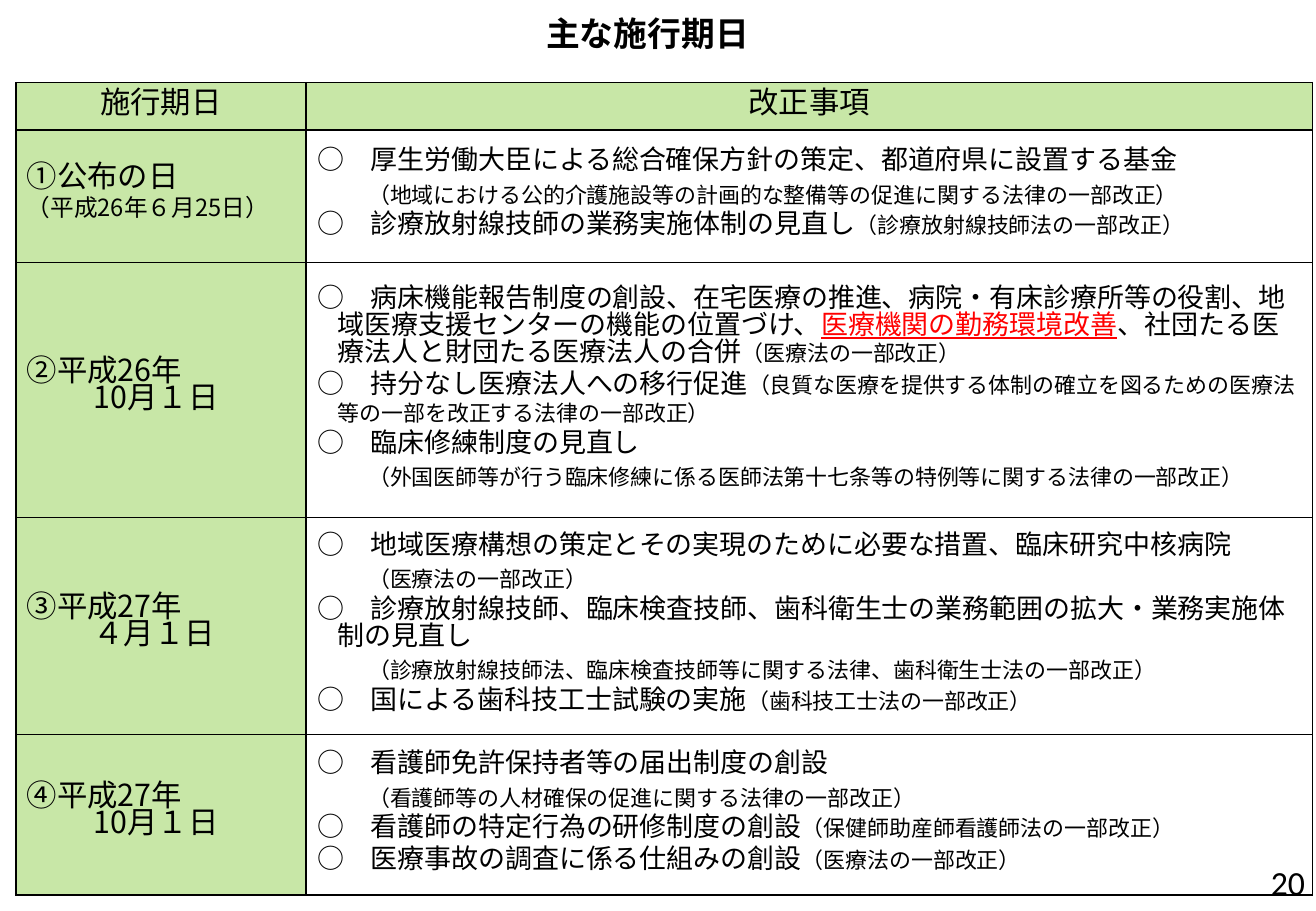
from dataclasses import dataclass

from lxml import etree
from pptx import Presentation
from pptx import util as u
from pptx.dml.color import RGBColor
from pptx.enum import text
from pptx.oxml import ns


@dataclass(frozen=True)
class Theme:
    black: str = "000000"
    red: str = "FF0000"
    green: str = "92D050"
    green_alpha: int = 50
    date_font: str = "Noto Sans CJK JP"
    item_font: str = "Calibri"
    title_size: int = 20
    date_size: int = 18
    item_size: int = 16
    note_size: int = 14
    law_size: int = 13
    line_pitch: int = 16
    border: int = 1


def add_xml(parent, tag, **attributes):
    return etree.SubElement(parent, ns.qn(tag), attributes)


class SlideBuilder:
    def __init__(self, slide, theme):
        self.slide = slide
        self.theme = theme
        # run style: font, size, colour, bold, underline
        self.styles = {
            "title": (theme.date_font, theme.title_size, theme.black, True, False),
            "number": (theme.item_font, theme.title_size, theme.black, False, False),
            "date": (theme.date_font, theme.date_size, theme.black, False, False),
            "note": (theme.date_font, theme.note_size, theme.black, False, False),
            "item": (theme.item_font, theme.item_size, theme.black, False, False),
            "key": (theme.item_font, theme.item_size, theme.red, False, True),
            "law": (theme.item_font, theme.law_size, theme.black, False, False),
        }

    def style_run(self, run, style):
        name, size, color, bold, underline = self.styles[style]
        font = run.font
        font.name, font.size = name, u.Pt(size)
        font.bold, font.underline = bold, underline
        font.color.rgb = RGBColor.from_string(color)
        add_xml(run._r.get_or_add_rPr(), "a:ea", typeface=self.theme.date_font)

    def single_line(self, shape, box, words, style, align):
        shape.left, shape.top, shape.width, shape.height = map(u.Inches, box)
        frame = shape.text_frame
        frame.text = words
        frame.word_wrap = True
        frame.auto_size = text.MSO_AUTO_SIZE.NONE
        frame.vertical_anchor = text.MSO_ANCHOR.MIDDLE
        frame.paragraphs[0].alignment = align
        self.style_run(frame.paragraphs[0].runs[0], style)

    def title(self, box, words):
        self.single_line(self.slide.shapes.title, box, words, "title",
                         text.PP_ALIGN.CENTER)

    def page_number(self, box, words):
        shape = self.slide.shapes.add_textbox(*map(u.Inches, box))
        self.single_line(shape, box, words, "number", text.PP_ALIGN.RIGHT)

    def cell_frame(self, cell, green):
        properties = cell._tc.get_or_add_tcPr()
        for side in ("a:lnL", "a:lnR", "a:lnT", "a:lnB"):
            line = add_xml(properties, side, w=str(u.Pt(self.theme.border)))
            add_xml(add_xml(line, "a:solidFill"), "a:srgbClr", val=self.theme.black)
        if green:
            cell.fill.solid()
            cell.fill.fore_color.rgb = RGBColor.from_string(self.theme.green)
            color = properties.find(ns.qn("a:solidFill")).find(ns.qn("a:srgbClr"))
            add_xml(color, "a:alpha", val=str(self.theme.green_alpha * 1000))
        else:
            cell.fill.background()

    def cell_text(self, cell, lines, align, bottom, space_after):
        """Each line is (left margin, first-line indent, [(style, words), ...])."""
        cell.vertical_anchor = text.MSO_ANCHOR.MIDDLE
        cell.margin_left = cell.margin_right = u.Inches(0.09)
        cell.margin_top, cell.margin_bottom = u.Inches(0.04), u.Inches(bottom)
        frame = cell.text_frame
        for index, (margin, indent, runs) in enumerate(lines):
            paragraph = frame.add_paragraph() if index else frame.paragraphs[0]
            paragraph.alignment = align
            paragraph.line_spacing = u.Pt(self.theme.line_pitch)
            paragraph.space_after = u.Pt(space_after)
            properties = paragraph._p.get_or_add_pPr()
            properties.set("marL", str(u.Inches(margin)))
            properties.set("indent", str(u.Inches(indent)))
            for style, words in runs:
                run = paragraph.add_run()
                run.text = words
                self.style_run(run, style)

    def schedule(self, box, widths, heights, header, rows):
        shape = self.slide.shapes.add_table(len(heights), len(widths),
                                            *map(u.Inches, box))
        table = shape.table
        table.horz_banding = False
        for column, width in zip(table.columns, widths):
            column.width = u.Inches(width)
        for row, height in zip(table.rows, heights):
            row.height = u.Inches(height)
        for index, words in enumerate(header):
            cell = table.cell(0, index)
            self.cell_frame(cell, True)
            self.cell_text(cell, [(0, 0, [("date", words)])],
                           text.PP_ALIGN.CENTER, 0, 0)
        for row, contents in enumerate(rows, 1):
            for column, lines in enumerate(contents):
                cell = table.cell(row, column)
                self.cell_frame(cell, column == 0)
                self.cell_text(cell, lines, text.PP_ALIGN.LEFT, 0.04, 3 * column)


# Kinds of line in the table
def date(words):
    return 0, 0, [("date", words)]


def date_end(words):
    return 0.55, 0, [("date", words)]


def note(words):
    return 0, 0, [("note", words)]


def law(words):
    return 0.42, 0, [("law", words)]


def item(words, *more):
    return 0.17, -0.17, [("item", "○　" + words), *more]


HEADER = ("施行期日", "改正事項")
ROWS = [
    ([date("①公布の日"), note("（平成26年６月25日）")],
     [item("厚生労働大臣による総合確保方針の策定、都道府県に設置する基金"),
      law("（地域における公的介護施設等の計画的な整備等の促進に関する法律の一部改正）"),
      item("診療放射線技師の業務実施体制の見直し",
           ("law", "（診療放射線技師法の一部改正）"))]),
    ([date("②平成26年"), date_end("10月１日")],
     [item("病床機能報告制度の創設、在宅医療の推進、病院・有床診療所等の役割、"
           "地域医療支援センターの機能の位置づけ、",
           ("key", "医療機関の勤務環境改善"),
           ("item", "、社団たる医療法人と財団たる医療法人の合併"),
           ("law", "（医療法の一部改正）")),
      item("持分なし医療法人への移行促進",
           ("law", "（良質な医療を提供する体制の確立を図るための"
                   "医療法等の一部を改正する法律の一部改正）")),
      item("臨床修練制度の見直し"),
      law("（外国医師等が行う臨床修練に係る医師法第十七条等の特例等に関する法律の一部改正）")]),
    ([date("③平成27年"), date_end("４月１日")],
     [item("地域医療構想の策定とその実現のために必要な措置、臨床研究中核病院"),
      law("（医療法の一部改正）"),
      item("診療放射線技師、臨床検査技師、歯科衛生士の業務範囲の拡大・業務実施体制の見直し"),
      law("（診療放射線技師法、臨床検査技師等に関する法律、歯科衛生士法の一部改正）"),
      item("国による歯科技工士試験の実施", ("law", "（歯科技工士法の一部改正）"))]),
    ([date("④平成27年"), date_end("10月１日")],
     [item("看護師免許保持者等の届出制度の創設"),
      law("（看護師等の人材確保の促進に関する法律の一部改正）"),
      item("看護師の特定行為の研修制度の創設",
           ("law", "（保健師助産師看護師法の一部改正）")),
      item("医療事故の調査に係る仕組みの創設", ("law", "（医療法の一部改正）"))]),
]


def main():
    presentation = Presentation()
    presentation.slide_width = u.Inches(10.83)
    presentation.slide_height = u.Inches(7.5)
    title_only = presentation.slide_layouts[5]
    builder = SlideBuilder(presentation.slides.add_slide(title_only), Theme())

    # Title, schedule table, page number
    builder.title((0.04, 0.05, 10.58, 0.44), "主な施行期日")
    builder.schedule((0.13, 0.68, 10.67, 6.69), (2.39, 8.28),
                     (0.39, 1.09, 2.1, 1.79, 1.32), HEADER, ROWS)
    builder.page_number((8.31, 7.06, 2.53, 0.4), "20")
    presentation.save("out.pptx")


if __name__ == "__main__":
    main()
